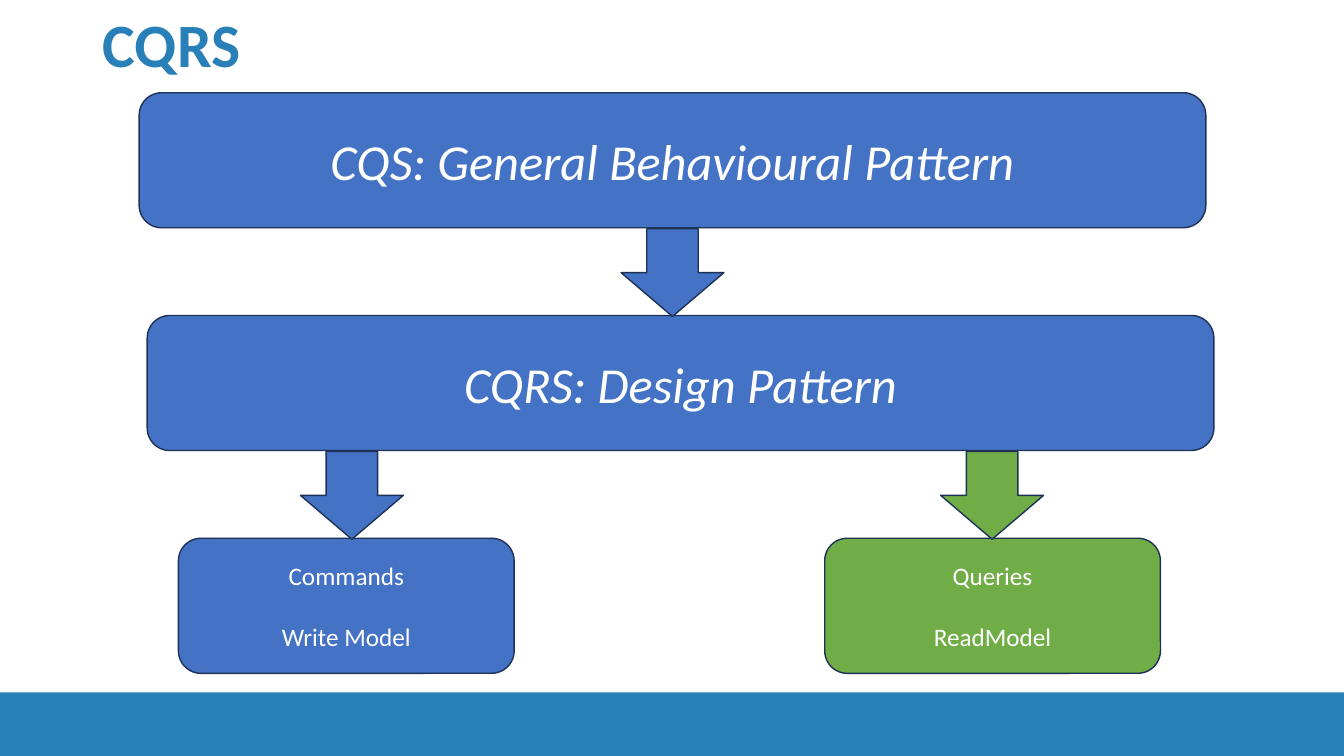
"""Builds the CQRS slide: a pattern hierarchy leading to write and read models."""
from pptx import Presentation
from pptx.dml.color import RGBColor
from pptx.enum.shapes import MSO_SHAPE
from pptx.enum.text import MSO_ANCHOR, PP_ALIGN
from pptx.util import Inches, Pt

RECTANGLE = MSO_SHAPE.RECTANGLE
ROUNDED = MSO_SHAPE.ROUNDED_RECTANGLE
DOWN_ARROW = MSO_SHAPE.DOWN_ARROW
MIDDLE = MSO_ANCHOR.MIDDLE
CENTER = PP_ALIGN.CENTER

BRAND, BLUE, GREEN, OUTLINE, WHITE = "2980B9", "4472C4", "70AD47", "1E3256", "FFFFFF"
BOX_HEIGHT = 1.34
ARROW_WIDTH, ARROW_HEIGHT = 1.02, 0.87


def color(hex_value):
    return RGBColor.from_string(hex_value)


def add_block(kind, left, top, width, height, fill, outline=OUTLINE):
    block = slide.shapes.add_shape(
        kind, Inches(left), Inches(top), Inches(width), Inches(height))
    block.shadow.inherit = False
    block.fill.solid()
    block.fill.fore_color.rgb = color(fill)
    if outline:
        block.line.color.rgb = color(outline)
        block.line.width = Pt(1)
    else:
        block.line.fill.background()
    return block


prs = Presentation()
prs.slide_width = Inches(13.33)
prs.slide_height = Inches(7.5)
slide = prs.slides.add_slide(prs.slide_layouts[6])

add_block(RECTANGLE, 0, 6.87, 13.33, 0.63, BRAND, outline=None)

title = slide.shapes.add_textbox(Inches(0.92), Inches(0.02), Inches(11.5), Inches(0.9))
title.text_frame.word_wrap = True
title.text_frame.vertical_anchor = MIDDLE
heading = title.text_frame.paragraphs[0]
heading.text = "CQRS"
heading.line_spacing = 0.9
heading.font.name = "Calibri"
heading.font.size = Pt(44)
heading.font.bold = True
heading.font.color.rgb = color(BRAND)

boxes = [
    (1.38, 0.92, 10.58, BLUE, 36, True, ["CQS: General Behavioural Pattern"]),
    (1.46, 3.13, 10.58, BLUE, 36, True, ["CQRS: Design Pattern"]),
    (1.77, 5.34, 3.33, BLUE, 18, False, ["Commands", "Write Model"]),
    (8.18, 5.34, 3.33, GREEN, 18, False, ["Queries", "ReadModel"]),
]
for left, top, width, fill, size, italic, lines in boxes:
    frame = add_block(ROUNDED, left, top, width, BOX_HEIGHT, fill).text_frame
    frame.word_wrap = True
    frame.vertical_anchor = MIDDLE
    for index, line in enumerate(lines):
        paragraph = frame.paragraphs[0] if index == 0 else frame.add_paragraph()
        paragraph.text = line
        paragraph.alignment = CENTER
        if index > 0:
            paragraph.space_before = Pt(22)
        paragraph.font.name = "Calibri"
        paragraph.font.size = Pt(size)
        paragraph.font.italic = italic
        paragraph.font.color.rgb = color(WHITE)

for left, top, fill in [(6.16, 2.27, BLUE), (2.98, 4.48, BLUE), (9.33, 4.48, GREEN)]:
    add_block(DOWN_ARROW, left, top, ARROW_WIDTH, ARROW_HEIGHT, fill)

prs.save("out.pptx")
